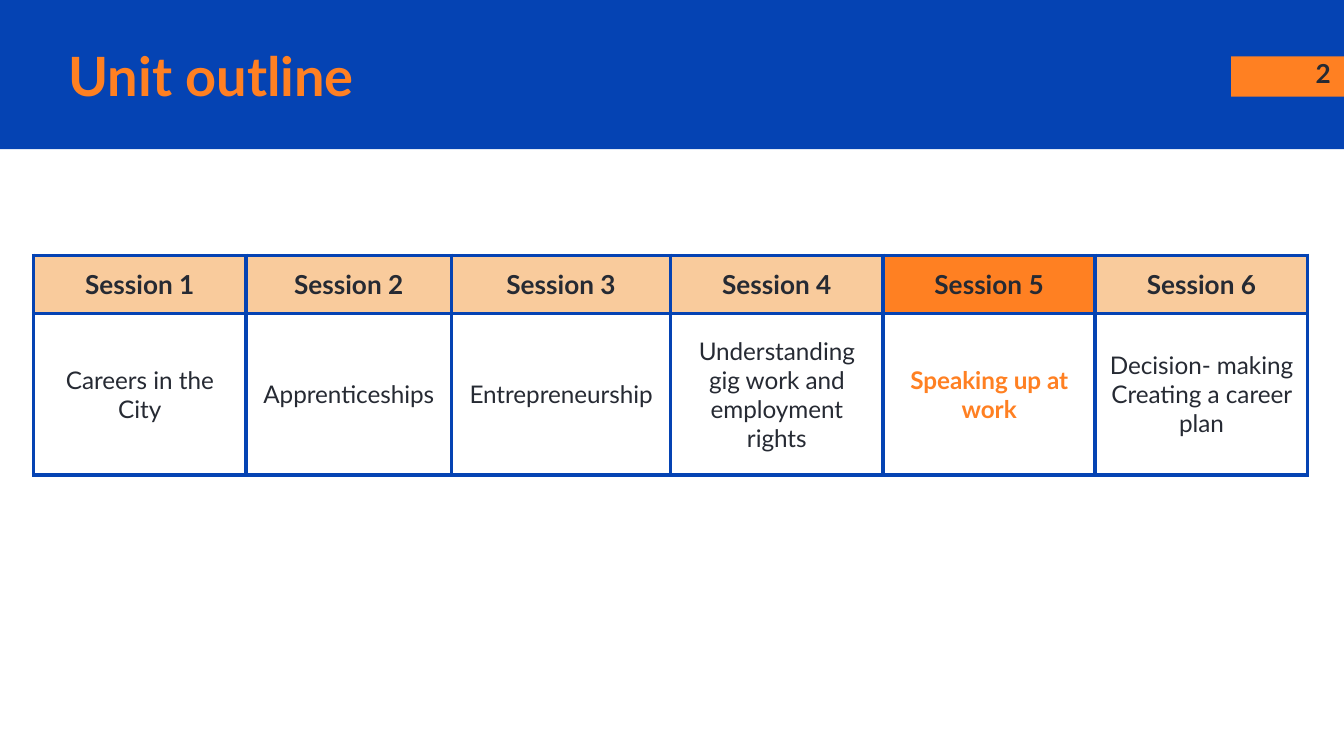
import pptx
import pptx.dml.color
import pptx.enum.shapes
import pptx.enum.text
import pptx.oxml
import pptx.oxml.ns
import pptx.util
from pptx.util import Inches

COLORS = {
    "blue": "0543B3",
    "orange": "FF8022",
    "peach": "F9CB9C",
    "ink": "262A33",
    "white": "FFFFFF",
}
FONT = "Lato"
ALIGN = pptx.enum.text.PP_ALIGN
MIDDLE = pptx.enum.text.MSO_ANCHOR.MIDDLE

SESSIONS = [
    "Careers in the City",
    "Apprenticeships",
    "Entrepreneurship",
    "Understanding gig work and employment rights",
    "Speaking up at work",
    "Decision- making\nCreating a career plan",
]
CURRENT_SESSION = 5
COLUMN_WIDTHS = [1.58, 1.53, 1.63, 1.58, 1.58, 1.58]
ROW_HEIGHTS = [0.43, 1.2]
BORDER_WIDTH = 2.25


def rgb(name):
    return pptx.dml.color.RGBColor.from_string(COLORS[name])


def set_margins(target):
    target.margin_left = target.margin_right = Inches(0.1)
    target.margin_top = target.margin_bottom = Inches(0.1)


def write_text(frame, text, size, color, bold, align):
    frame.text = text
    for para in frame.paragraphs:
        para.alignment = align
        para.font.name = FONT
        para.font.size = pptx.util.Pt(size)
        para.font.bold = bold
        para.font.color.rgb = rgb(color)


def add_bar(page, left, top, width, height, color):
    bar = page.shapes.add_shape(
        pptx.enum.shapes.MSO_SHAPE.RECTANGLE,
        Inches(left), Inches(top), Inches(width), Inches(height))
    bar.shadow.inherit = False
    bar.fill.solid()
    bar.fill.fore_color.rgb = rgb(color)
    bar.line.fill.background()


def add_page_number(page, number):
    box = page.shapes.add_textbox(Inches(9.4), Inches(0.33), Inches(0.6), Inches(0.43))
    box.text_frame.word_wrap = True
    set_margins(box.text_frame)
    write_text(box.text_frame, number, 14, "ink", True, ALIGN.RIGHT)


def place_title(page, text):
    title = page.shapes.title
    title.left, title.top = Inches(0.41), Inches(0.28)
    title.width, title.height = Inches(8.46), Inches(0.56)
    frame = title.text_frame
    set_margins(frame)
    frame.vertical_anchor = MIDDLE
    write_text(frame, text, 29, "orange", True, ALIGN.LEFT)
    # Bring the title in front of the header band
    page.shapes.element.append(title.element)


def set_borders(cell, color):
    properties = cell._tc.get_or_add_tcPr()
    for side in ("lnL", "lnR", "lnT", "lnB"):
        properties.append(pptx.oxml.parse_xml(
            f'<a:{side} {pptx.oxml.ns.nsdecls("a")} w="{pptx.util.Pt(BORDER_WIDTH)}">'
            f'<a:solidFill><a:srgbClr val="{COLORS[color]}"/></a:solidFill>'
            f'</a:{side}>'))


def fill_cell(cell, text, size, color, bold, background):
    set_borders(cell, "blue")
    cell.fill.solid()
    cell.fill.fore_color.rgb = rgb(background)
    cell.vertical_anchor = MIDDLE
    set_margins(cell)
    write_text(cell.text_frame, text, size, color, bold, ALIGN.CENTER)


def add_session_table(page):
    frame = page.shapes.add_table(
        len(ROW_HEIGHTS), len(COLUMN_WIDTHS), Inches(0.25), Inches(1.9),
        Inches(sum(COLUMN_WIDTHS)), Inches(sum(ROW_HEIGHTS)))
    table = frame.table
    for column, width in zip(table.columns, COLUMN_WIDTHS):
        column.width = Inches(width)
    for row, height in zip(table.rows, ROW_HEIGHTS):
        row.height = Inches(height)

    for number, topic in enumerate(SESSIONS, start=1):
        current = number == CURRENT_SESSION
        fill_cell(table.cell(0, number - 1), f"Session {number}", 14, "ink", True,
                  "orange" if current else "peach")
        fill_cell(table.cell(1, number - 1), topic, 13,
                  "orange" if current else "ink", current, "white")


def main():
    # Widescreen page, 16 to 9
    deck = pptx.Presentation()
    deck.slide_width, deck.slide_height = Inches(10), Inches(10 * 9 / 16)
    page = deck.slides.add_slide(deck.slide_layouts[5])

    # Header band with page number tab and title
    add_bar(page, 0, 0, 10, 1.11, "blue")
    add_bar(page, 9.16, 0.42, 0.84, 0.3, "orange")
    add_page_number(page, "2")
    place_title(page, "Unit outline")

    # Sessions of the unit
    add_session_table(page)

    deck.save("out.pptx")


if __name__ == "__main__":
    main()
